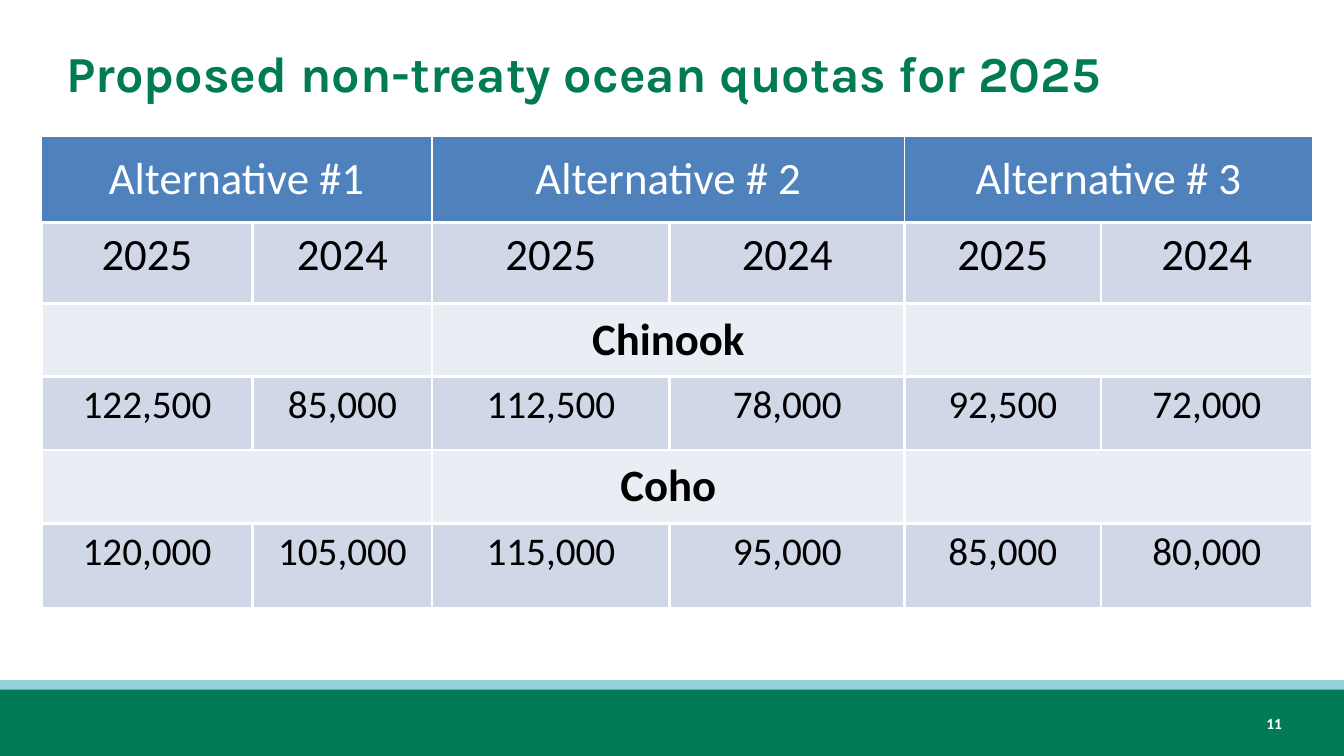
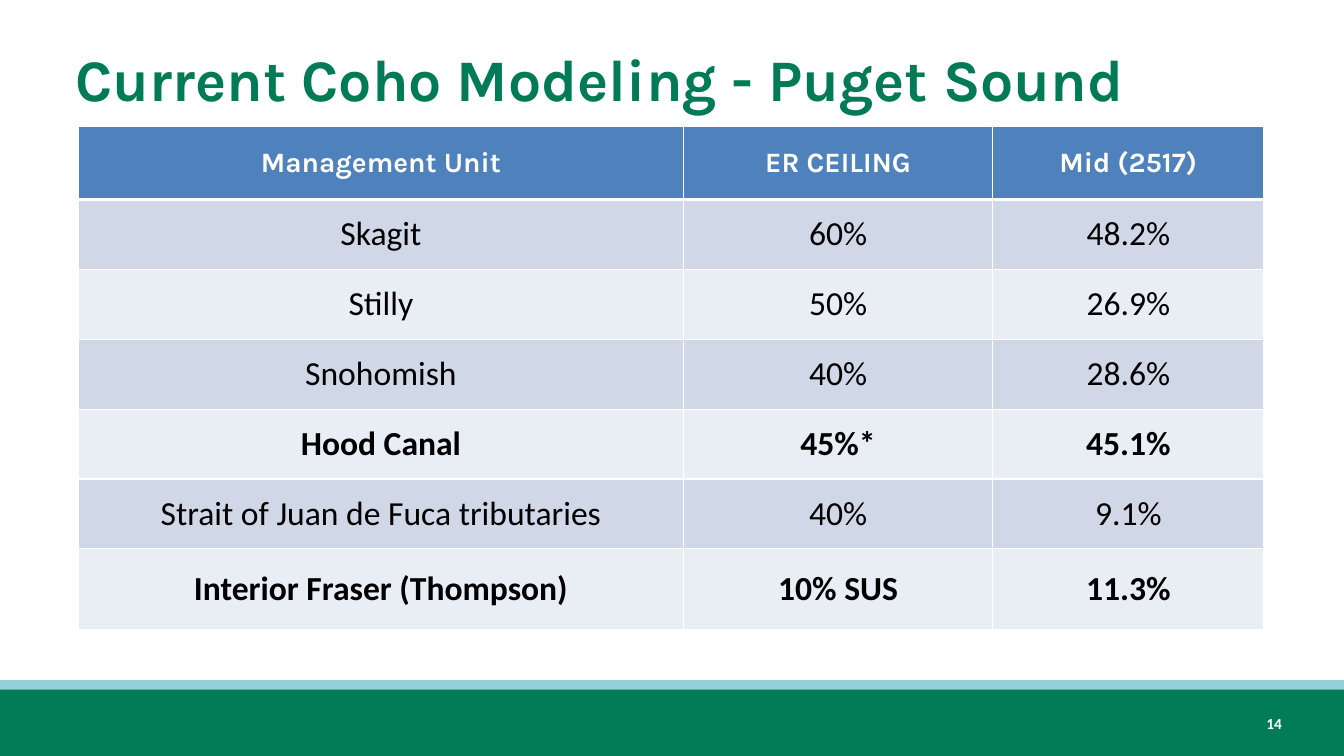
from dataclasses import dataclass
from typing import Any

from lxml.etree import SubElement
from pptx import Presentation
from pptx.dml.color import RGBColor
from pptx.enum.shapes import MSO_SHAPE
from pptx.enum.text import MSO_ANCHOR, MSO_AUTO_SIZE, PP_ALIGN
from pptx.oxml.ns import qn
from pptx.util import Cm, Pt


# Shared look
@dataclass(frozen=True)
class Theme:
    green: str = "007B55"
    aqua: str = "92D2D8"
    blue: str = "4F81BD"
    dark_band: str = "D0D8E8"
    light_band: str = "E9EDF4"
    white: str = "FFFFFF"
    black: str = "000000"
    heading_font: str = "Karla"
    body_font: str = "Calibri"
    title_size: int = 36
    large_title_size: int = 42
    label_size: int = 32
    value_size: int = 28
    unit_size: int = 24
    column_size: int = 20
    number_size: int = 11


THEME = Theme()
SLIDE_WIDTH, SLIDE_HEIGHT = 33.87, 19.05


@dataclass(frozen=True)
class Frame:
    left: float
    top: float
    width: float
    height: float

    def lengths(self) -> list[Cm]:
        return [Cm(value) for value in (self.left, self.top, self.width, self.height)]


@dataclass(frozen=True)
class Band:
    frame: Frame
    color: str


@dataclass(frozen=True)
class TextStyle:
    size: int
    color: str = THEME.black
    bold: bool = False
    font: str = THEME.body_font


@dataclass(frozen=True)
class Row:
    cells: list[str]
    height: float
    style: TextStyle
    anchor: Any = MSO_ANCHOR.MIDDLE


@dataclass(frozen=True)
class TableSpec:
    left: float
    top: float
    columns: list[float]
    rows: list[Row]
    rule: float
    header_side: float
    header_base: float
    margins: dict[str, int]


@dataclass(frozen=True)
class Page:
    title: str
    title_frame: Frame
    title_size: int
    title_spacing: float
    number: int
    table: TableSpec


FOOTER_BANDS = [
    Band(Frame(0, 17.37, SLIDE_WIDTH, 1.68), THEME.green),
    Band(Frame(0, 17.14, SLIDE_WIDTH, 0.23), THEME.aqua),
]
NUMBER_FRAME = Frame(30.58, 17.86, 1.98, 0.74)
NUMBER_STYLE = TextStyle(THEME.number_size, THEME.white, True)


def apply_format(target: Any, values: dict[str, Any]) -> None:
    for name, value in values.items():
        setattr(target, name, value)


def write_text(text_frame: Any, text: str, style: TextStyle, align: Any,
               spacing: float = 1.0) -> None:
    para = text_frame.paragraphs[0]
    apply_format(para, {"alignment": align, "line_spacing": spacing})
    span = para.add_run()
    span.text = text
    apply_format(span.font, {"name": style.font, "size": Pt(style.size), "bold": style.bold})
    span.font.color.rgb = RGBColor.from_string(style.color)


# Title, bands and page number
def add_title(slide: Any, page: Page) -> None:
    box = slide.shapes.title
    for name, value in zip(("left", "top", "width", "height"), page.title_frame.lengths()):
        setattr(box, name, value)
    apply_format(box.text_frame, {
        "word_wrap": True,
        "auto_size": MSO_AUTO_SIZE.NONE,
        "vertical_anchor": MSO_ANCHOR.MIDDLE,
    })
    style = TextStyle(page.title_size, THEME.green, True, THEME.heading_font)
    write_text(box.text_frame, page.title, style, PP_ALIGN.LEFT, page.title_spacing)


def add_footer(slide: Any, number: int) -> None:
    for band in FOOTER_BANDS:
        shape = slide.shapes.add_shape(MSO_SHAPE.RECTANGLE, *band.frame.lengths())
        shape.shadow.inherit = False
        shape.fill.solid()
        shape.fill.fore_color.rgb = RGBColor.from_string(band.color)
        shape.line.fill.background()
    box = slide.shapes.add_textbox(*NUMBER_FRAME.lengths())
    box.text_frame.word_wrap = True
    write_text(box.text_frame, str(number), NUMBER_STYLE, PP_ALIGN.RIGHT)


# Tables
def set_borders(cell: Any, widths: dict[str, float]) -> None:
    properties = cell._tc.get_or_add_tcPr()
    for side, width in widths.items():
        line = SubElement(properties, qn(f"a:ln{side}"), w=str(Pt(width)))
        fill = SubElement(line, qn("a:solidFill"))
        SubElement(fill, qn("a:srgbClr"), val=THEME.white)


def row_fill(row_index: int) -> str:
    if row_index == 0:
        return THEME.blue
    return THEME.dark_band if row_index % 2 else THEME.light_band


def add_table(slide: Any, spec: TableSpec) -> None:
    frame = Frame(spec.left, spec.top, sum(spec.columns), sum(row.height for row in spec.rows))
    table = slide.shapes.add_table(len(spec.rows), len(spec.columns), *frame.lengths()).table
    apply_format(table, {"first_row": False, "horz_banding": False})
    for column, width in zip(table.columns, spec.columns):
        column.width = Cm(width)
    for row_index, row in enumerate(spec.rows):
        table.rows[row_index].height = Cm(row.height)
        side = spec.header_side if row_index == 0 else spec.rule
        widths = {
            "L": side,
            "R": side,
            "T": spec.header_base if row_index == 1 else spec.rule,
            "B": spec.header_base if row_index == 0 else spec.rule,
        }
        for cell in table.rows[row_index].cells:
            set_borders(cell, widths)
            cell.fill.solid()
            cell.fill.fore_color.rgb = RGBColor.from_string(row_fill(row_index))
            apply_format(cell, {"vertical_anchor": row.anchor, **spec.margins})
        # A row with fewer entries spreads each one over several columns
        reach = len(spec.columns) // len(row.cells)
        for position, text in enumerate(row.cells):
            first = position * reach
            cell = table.cell(row_index, first)
            if reach > 1:
                cell.merge(table.cell(row_index, first + reach - 1))
            if text:
                write_text(cell.text_frame, text, row.style, PP_ALIGN.CENTER)


# Content
ALTERNATIVE = TextStyle(THEME.label_size, THEME.white)
YEAR = TextStyle(THEME.label_size)
SPECIES = TextStyle(THEME.label_size, bold=True)
QUOTA = TextStyle(THEME.value_size)
COLUMN_HEAD = TextStyle(THEME.column_size, THEME.white, True, THEME.heading_font)
UNIT = TextStyle(THEME.unit_size)
KEY_UNIT = TextStyle(THEME.unit_size, bold=True)
TOP = MSO_ANCHOR.TOP

QUOTA_TABLE = TableSpec(
    left=1.04, top=3.43,
    columns=[5.33, 4.52, 5.99, 5.92, 4.95, 5.33],
    rows=[
        Row(["Alternative #1", "Alternative # 2", "Alternative # 3"], 2.18, ALTERNATIVE),
        Row(["2025", "2024"] * 3, 2.03, YEAR, TOP),
        Row(["", "Chinook", ""], 1.85, SPECIES),
        Row(["122,500", "85,000", "112,500", "78,000", "92,500", "72,000"], 1.85, QUOTA, TOP),
        Row(["", "Coho", ""], 1.85, SPECIES),
        Row(["120,000", "105,000", "115,000", "95,000", "85,000", "80,000"], 2.13, QUOTA, TOP),
    ],
    rule=2.25, header_side=1, header_base=2.25, margins={},
)

COHO_TABLE = TableSpec(
    left=1.98, top=3.18,
    columns=[15.24, 7.8, 6.83],
    rows=[
        Row(["Management Unit", "ER CEILING", "Mid (2517)"], 1.85, COLUMN_HEAD),
        Row(["Skagit", "60%", "48.2%"], 1.76, UNIT),
        Row(["Stilly", "50%", "26.9%"], 1.76, UNIT),
        Row(["Snohomish", "40%", "28.6%"], 1.76, UNIT),
        Row(["Hood Canal", "45%*", "45.1%"], 1.76, KEY_UNIT),
        Row(["Strait of Juan de Fuca tributaries", "40%", "9.1%"], 1.76, UNIT),
        Row(["Interior Fraser (Thompson)", "10% SUS", "11.3%"], 2.03, KEY_UNIT),
    ],
    rule=1, header_side=1, header_base=3,
    margins={f"margin_{side}": 0 for side in ("left", "right", "top", "bottom")},
)

PAGES = [
    Page("Proposed non-treaty ocean quotas for 2025", Frame(1.42, 0.64, 32.05, 2.54),
         THEME.title_size, 0.9, 11, QUOTA_TABLE),
    Page("Current Coho Modeling - Puget Sound", Frame(1.65, 0.76, 30.53, 2.41),
         THEME.large_title_size, 1.0, 14, COHO_TABLE),
]


def main() -> None:
    deck = Presentation()
    apply_format(deck, {"slide_width": Cm(SLIDE_WIDTH), "slide_height": Cm(SLIDE_HEIGHT)})
    title_only = deck.slide_layouts.get_by_name("Title Only")
    for page in PAGES:
        slide = deck.slides.add_slide(title_only)
        add_footer(slide, page.number)
        add_title(slide, page)
        add_table(slide, page.table)
    deck.save("out.pptx")


if __name__ == "__main__":
    main()
